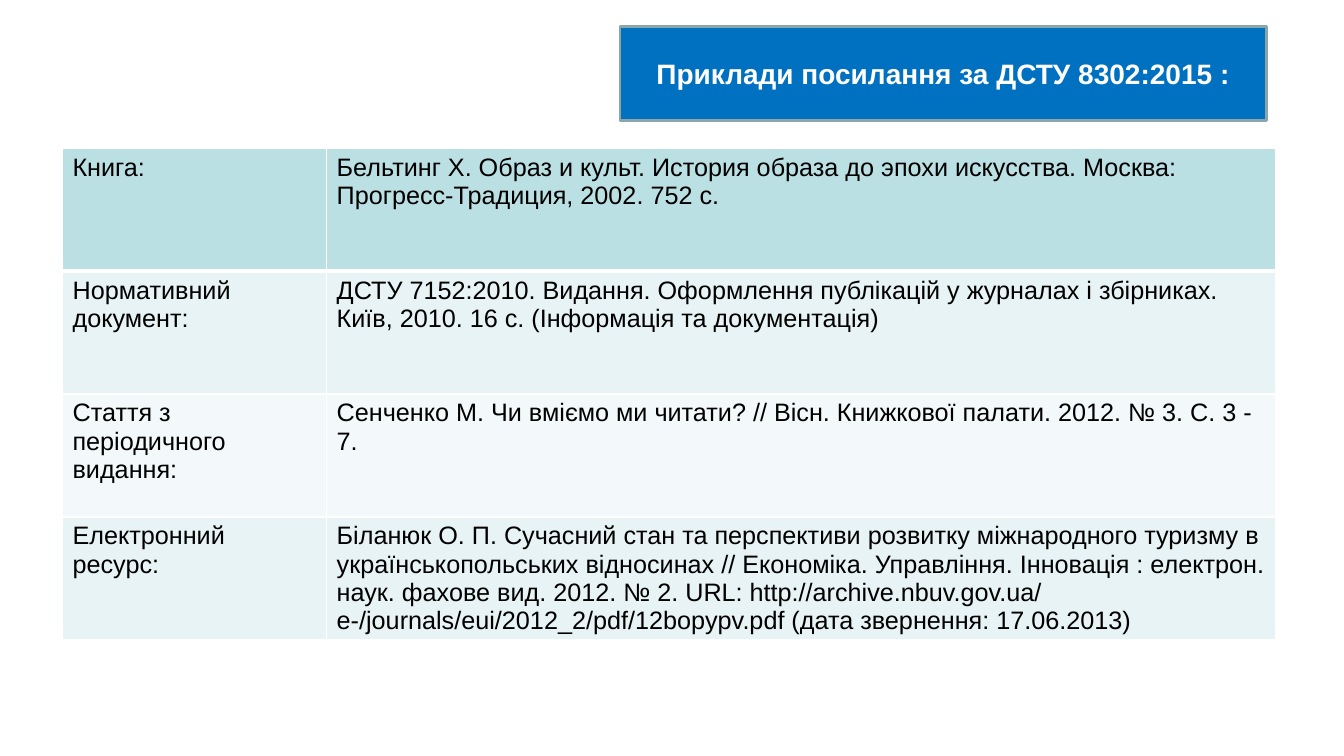
import pptx
import pptx.dml.color
import pptx.enum.shapes
import pptx.enum.text
import pptx.oxml.ns
import pptx.util
from lxml import etree
from pptx.util import Inches

FONT = "Arial"
COLUMN_WIDTHS = (2.62, 9.41)
ROW_HEIGHT = 1.22
ROW_FILLS = ("BBE0E3", "E7F3F4", "F3F9FA", "E7F3F4")
REFERENCES = (
    ("Книга:",
     "Бельтинг Х. Образ и культ. История образа до эпохи искусства. Москва: "
     "Прогресс-Традиция, 2002. 752 с."),
    ("Нормативний документ:",
     "ДСТУ 7152:2010. Видання. Оформлення публікацій у журналах і збірниках. "
     "Київ, 2010. 16 с. (Інформація та документація)"),
    ("Стаття з періодичного видання:",
     "Сенченко М. Чи вміємо ми читати? // Вісн. Книжкової палати. 2012. № 3. С. 3 - 7."),
    ("Електронний ресурс:",
     "Біланюк О. П. Сучасний стан та перспективи розвитку міжнародного туризму в "
     "українськопольських відносинах // Економіка. Управління. Інновація : електрон. "
     "наук. фахове вид. 2012. № 2. URL: http://archive.nbuv.gov.ua/ "
     "e-/journals/eui/2012_2/pdf/12bopypv.pdf (дата звернення: 17.06.2013)"),
)


def rgb(value):
    return pptx.dml.color.RGBColor.from_string(value)


def set_text(tf, text, size, color, bold=False):
    tf.text = text
    font = tf.paragraphs[0].runs[0].font
    font.name = FONT
    font.size = pptx.util.Pt(size)
    font.bold = bold
    font.color.rgb = rgb(color)


def set_border(cell, side, color, width):
    qn = pptx.oxml.ns.qn
    ln = etree.SubElement(cell._tc.get_or_add_tcPr(), qn(f"a:{side}"),
                          w=str(pptx.util.Pt(width)))
    fill = etree.SubElement(ln, qn("a:solidFill"))
    etree.SubElement(fill, qn("a:srgbClr"), val=color)


def add_title_box(slide, text):
    sp = slide.shapes.add_shape(pptx.enum.shapes.MSO_SHAPE.RECTANGLE,
                                Inches(6.15), Inches(0.26), Inches(6.41), Inches(0.94))
    sp.shadow.inherit = False
    sp.fill.solid()
    sp.fill.fore_color.rgb = rgb("0070C0")
    sp.line.color.rgb = rgb("8AA6A8")
    sp.line.width = pptx.util.Pt(2)
    tf = sp.text_frame
    tf.word_wrap = True
    tf.vertical_anchor = pptx.enum.text.MSO_ANCHOR.MIDDLE
    set_text(tf, text, 20, "FFFFFF", bold=True)
    tf.paragraphs[0].alignment = pptx.enum.text.PP_ALIGN.CENTER


def add_reference_table(slide):
    table = slide.shapes.add_table(
        len(REFERENCES), len(COLUMN_WIDTHS), Inches(0.62), Inches(1.47),
        Inches(sum(COLUMN_WIDTHS)), Inches(ROW_HEIGHT * len(REFERENCES))).table
    table.first_row = False
    table.horz_banding = False
    for column, width in zip(table.columns, COLUMN_WIDTHS):
        column.width = Inches(width)
    for i, (texts, fill) in enumerate(zip(REFERENCES, ROW_FILLS)):
        table.rows[i].height = Inches(ROW_HEIGHT)
        for j, text in enumerate(texts):
            cell = table.cell(i, j)
            set_text(cell.text_frame, text, 18, "000000")
            # A thicker rule separates the first row from the rest
            widths = {"lnL": 1, "lnR": 1, "lnT": 3 if i == 1 else 1, "lnB": 3 if i == 0 else 1}
            for side, width in widths.items():
                set_border(cell, side, "FFFFFF", width)
            cell.fill.solid()
            cell.fill.fore_color.rgb = rgb(fill)


def main():
    prs = pptx.Presentation()
    prs.slide_width = Inches(13.33)
    prs.slide_height = Inches(7.5)
    slide = prs.slides.add_slide(prs.slide_layouts[6])

    # Heading
    add_title_box(slide, "Приклади посилання за ДСТУ 8302:2015 :")
    # Source types with sample references
    add_reference_table(slide)

    prs.save("out.pptx")


if __name__ == "__main__":
    main()
